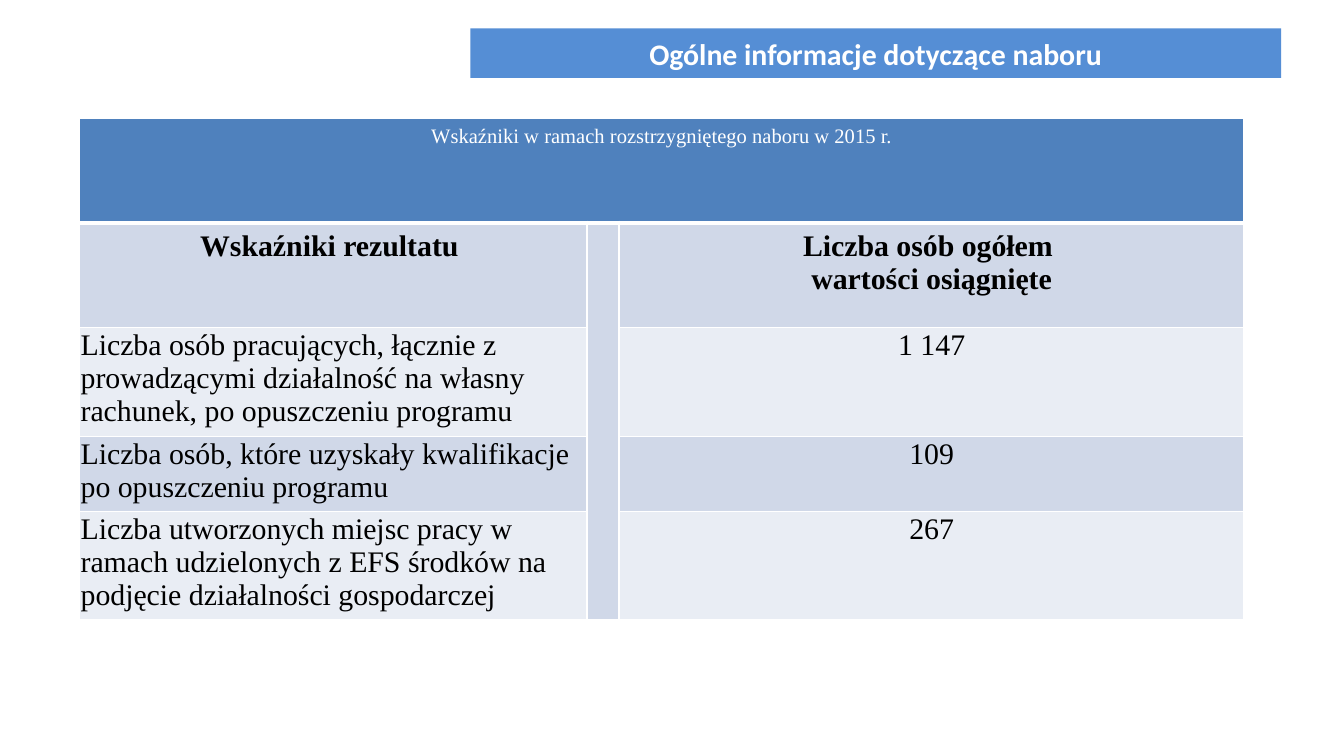
from pptx import Presentation
from pptx.dml.color import RGBColor as RGB
from pptx.enum.text import MSO_ANCHOR as Anchor, MSO_AUTO_SIZE as Fit, PP_ALIGN as Align
from pptx.oxml.ns import qn
from pptx.util import Pt
from lxml.etree import SubElement as Sub

WHITE = RGB(0xFF, 0xFF, 0xFF)
BLACK = RGB(0, 0, 0)
BLUE = RGB(0x55, 0x8E, 0xD5)
HEAD = RGB(0x4F, 0x81, 0xBD)
DARK = RGB(0xD0, 0xD8, 0xE8)
LIGHT = RGB(0xE9, 0xED, 0xF4)
SERIF = "Times New Roman"

COLS = [272, 17, 334.8]
ROWS = [56, 56, 58.5, 40, 58]
DATA = [
    ("Liczba osób pracujących, łącznie z prowadzącymi działalność na własny rachunek, "
     "po opuszczeniu programu", "1 147"),
    ("Liczba osób, które uzyskały kwalifikacje po opuszczeniu programu", "109"),
    ("Liczba utworzonych miejsc pracy w ramach udzielonych z EFS środków na podjęcie "
     "działalności gospodarczej", "267"),
]


def write(frame, lines, font, size, color, bold=False, align=Align.CENTER):
    """Write each line as a paragraph of one run."""
    for i, line in enumerate(lines):
        para = frame.add_paragraph() if i else frame.paragraphs[0]
        para.alignment = align
        run = para.add_run()
        run.text = line
        run.font.name, run.font.size, run.font.bold = font, Pt(size), bold
        run.font.color.rgb = color


def style(cell, color, base=1):
    """Give a cell white borders and a solid fill."""
    props = cell._tc.get_or_add_tcPr()
    for side, width in zip("LRTB", (1, 1, 1, base)):
        line = Sub(props, qn(f"a:ln{side}"), w=str(Pt(width)))
        Sub(Sub(line, qn("a:solidFill")), qn("a:srgbClr"), val=str(WHITE))
    cell.fill.solid()
    cell.fill.fore_color.rgb = color


def banner(slide, left, top, width, height):
    """Place the title as a filled bar."""
    bar = slide.shapes.title
    bar.left, bar.top, bar.width, bar.height = map(Pt, (left, top, width, height))
    bar.fill.solid()
    bar.fill.fore_color.rgb = BLUE
    frame = bar.text_frame
    frame.word_wrap, frame.auto_size = True, Fit.NONE
    frame.vertical_anchor = Anchor.MIDDLE
    write(frame, ["Ogólne informacje dotyczące naboru"], "Calibri", 16, WHITE, True)


def results(slide, left, top, width, height):
    """Place the table of result indicators."""
    box = map(Pt, (left, top, width, height))
    table = slide.shapes.add_table(len(ROWS), len(COLS), *box).table
    for col, size in zip(table.columns, COLS):
        col.width = Pt(size * width / sum(COLS))
    for row, size in zip(table.rows, ROWS):
        row.height = Pt(size * height / sum(ROWS))

    for r in range(len(ROWS)):
        for c in range(len(COLS)):
            fill = HEAD if r == 0 else DARK if c == 1 or r % 2 else LIGHT
            style(table.cell(r, c), fill, 1 if r else 3)
    table.cell(0, 0).merge(table.cell(0, 2))
    table.cell(1, 1).merge(table.cell(4, 1))

    write(table.cell(0, 0).text_frame,
          ["Wskaźniki w ramach rozstrzygniętego naboru w 2015 r."], SERIF, 11, WHITE)
    write(table.cell(1, 0).text_frame, ["Wskaźniki rezultatu "], SERIF, 16, BLACK, True)
    write(table.cell(1, 2).text_frame,
          ["Liczba osób ogółem ", "wartości osiągnięte"], SERIF, 16, BLACK, True)
    for r, pair in enumerate(DATA, 2):
        for c, text, align in zip((0, 2), pair, (Align.LEFT, Align.CENTER)):
            cell = table.cell(r, c)
            cell.margin_left = cell.margin_right = cell.margin_top = Pt(0.72)
            cell.margin_bottom = Pt(0)
            write(cell.text_frame, [text], SERIF, 16, BLACK, align=align)


def main():
    """Build and save the slide."""
    deck = Presentation()
    deck.slide_width, deck.slide_height = Pt(720), Pt(405)
    slide = deck.slides.add_slide(deck.slide_layouts[5])
    banner(slide, 252, 15.2, 434.4, 26.6)
    results(slide, 42.5, 63.5, 623.8, 268.5)
    deck.save("out.pptx")


if __name__ == "__main__":
    main()
